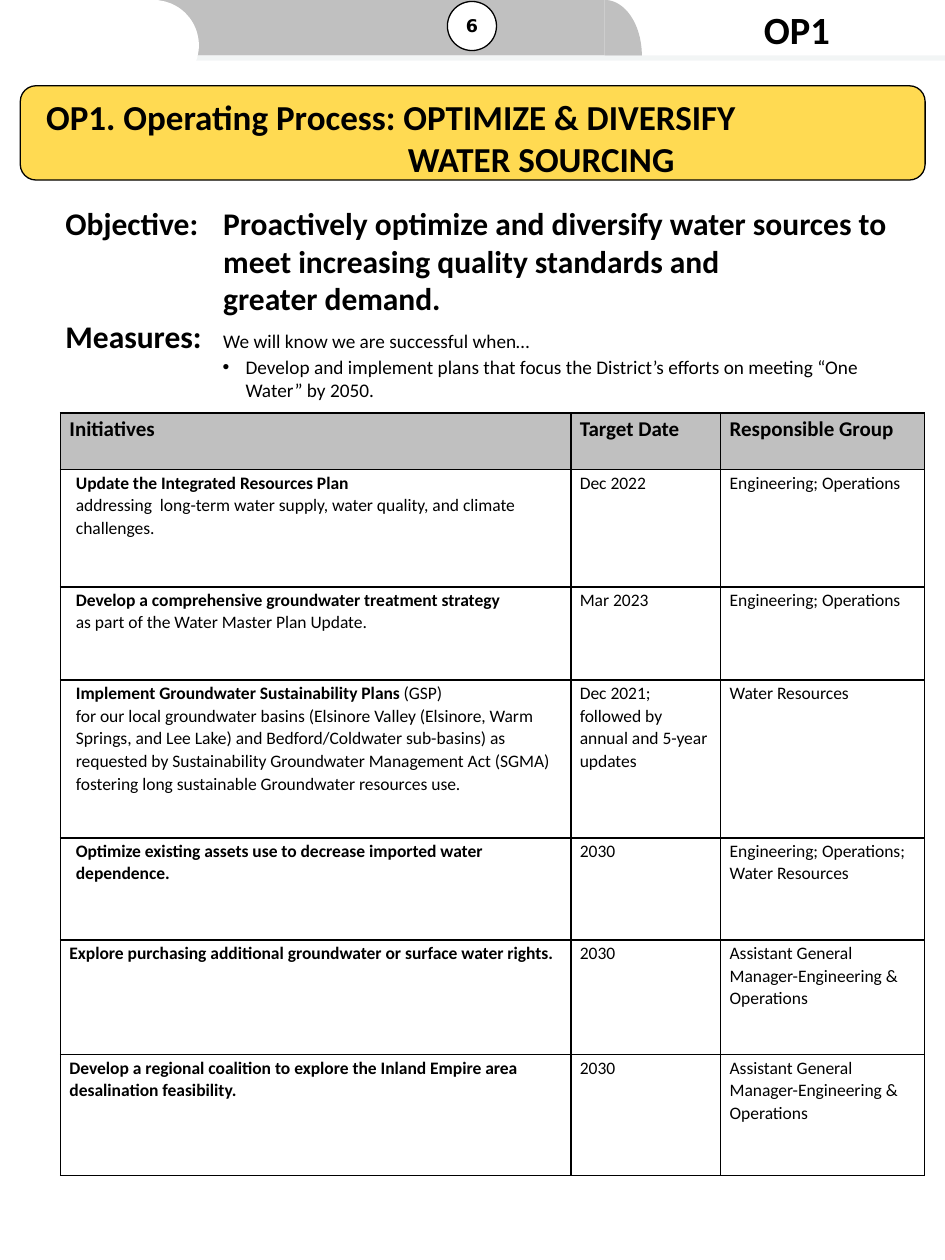
from math import cos, pi, sin

from lxml import etree
from pptx import Presentation
from pptx.dml.color import RGBColor
from pptx.enum.shapes import MSO_CONNECTOR, MSO_SHAPE
from pptx.enum.text import MSO_ANCHOR, MSO_AUTO_SIZE, PP_ALIGN
from pptx.oxml import parse_xml
from pptx.oxml.ns import nsdecls, qn
from pptx.util import Cm, Pt

RECT, OVAL, ROUND = MSO_SHAPE.RECTANGLE, MSO_SHAPE.OVAL, MSO_SHAPE.ROUNDED_RECTANGLE
LEFT, MID = PP_ALIGN.LEFT, PP_ALIGN.CENTER
TOP, CENTER = MSO_ANCHOR.TOP, MSO_ANCHOR.MIDDLE
STRAIGHT, FIXED = MSO_CONNECTOR.STRAIGHT, MSO_AUTO_SIZE.NONE
BLACK = RGBColor(0, 0, 0)
WHITE = RGBColor(255, 255, 255)
GREY = RGBColor(0xC0, 0xC0, 0xC0)
PALE = RGBColor(0xE7, 0xEC, 0xED)
GOLD = RGBColor(0xFF, 0xDA, 0x52)

CODE = "OP1"
PAGE = "6"
TITLE = "OP1. Operating Process: OPTIMIZE & DIVERSIFY \nWATER SOURCING"
GOAL = ("Objective: \tProactively optimize and diversify water sources to meet "
        "increasing quality standards and \ngreater demand.")
LABEL = "Measures: \t"
LEAD = "We will know we are successful when…"
POINT = ("Develop and implement plans that focus the District’s efforts on "
         "meeting “One Water” by 2050.")

HEADS = ["Initiatives", "Target Date", "Responsible Group"]
TEAM = "Engineering; Operations"
CHIEF = "Assistant General Manager-Engineering & Operations"
ITEMS = [
    ("Update the Integrated Resources Plan \n",
     "addressing  long-term water supply, water quality, and climate challenges.",
     "Dec 2022", TEAM, 0.13),
    ("Develop a comprehensive groundwater treatment strategy \n",
     "as part of the Water Master Plan Update.",
     "Mar 2023", TEAM, 0.13),
    ("Implement Groundwater Sustainability Plans ",
     "(GSP) \nfor our local groundwater basins (Elsinore Valley (Elsinore, Warm "
     "Springs, and Lee Lake) and Bedford/Coldwater sub-basins) as requested by "
     "Sustainability Groundwater Management Act (SGMA) fostering long "
     "sustainable Groundwater resources use.",
     "Dec 2021; followed by annual and 5-year updates", "Water Resources", 0.13),
    ("Optimize existing assets use to decrease imported water dependence.", "",
     "2030", "Engineering; Operations; Water Resources", 0.13),
    ("Explore purchasing additional groundwater or surface water rights.", "",
     "2030", CHIEF, 0),
    ("Develop a regional coalition to explore the Inland Empire area "
     "desalination feasibility.", "", "2030", CHIEF, 0),
]
COLS = [10.29, 3.02, 4.11]
ROWS = [1.14, 2.36, 1.88, 3.18, 2.06, 2.31, 2.44]


def write(par, text, size=10, bold=False, font="Calibri"):
    for i, part in enumerate(text.split("\n")):
        if i:
            par.add_line_break()
        if part:
            run = par.add_run()
            run.text = part
            run.font.size = Pt(size)
            run.font.bold = bold
            run.font.name = font
            run.font.color.rgb = BLACK


def indent(par, left, first=0):
    props = par._p.get_or_add_pPr()
    props.set("marL", str(Cm(left)))
    props.set("indent", str(Cm(first)))
    return props


def setup(frame, inset, anchor=TOP):
    frame.word_wrap = True
    frame.auto_size = FIXED
    frame.vertical_anchor = anchor
    frame.margin_left = frame.margin_right = Cm(inset)
    frame.margin_top = frame.margin_bottom = Cm(inset)
    return frame.paragraphs[0]


def paint(shape, fill, edge=None):
    shape.shadow.inherit = False
    shape.fill.solid()
    shape.fill.fore_color.rgb = fill
    if edge is None:
        shape.line.fill.background()
    else:
        shape.line.color.rgb = edge
        shape.line.width = Pt(0.75)
    return shape


def draw(slide, kind, box, fill, edge=None):
    return paint(slide.shapes.add_shape(kind, *map(Cm, box)), fill, edge)


def frame(cell):
    props = cell._tc.get_or_add_tcPr()
    for side in "LRTB":
        props.append(parse_xml(
            f'<a:ln{side} {nsdecls("a")} w="12700"><a:solidFill>'
            f'<a:srgbClr val="{BLACK}"/></a:solidFill></a:ln{side}>'))


def add_top(slide):
    draw(slide, RECT, (0, 0, 12.19, 1.12), GREY)
    badge = draw(slide, OVAL, (9.02, 0.03, 0.99, 0.99), WHITE, BLACK)
    par = setup(badge.text_frame, 0, CENTER)
    par.alignment = MID
    write(par, PAGE, bold=True, font="DejaVu Sans")

    turns = [pi / 2 * i / 24 for i in range(25)]
    arc = [(Cm(12.19 + 0.75 * sin(t)), Cm(1.12 - 1.12 * cos(t))) for t in turns]
    path = slide.shapes.build_freeform(Cm(12.19), Cm(1.12))
    path.add_line_segments(arc, close=True)
    paint(path.convert_to_shape(), GREY)

    rule = slide.shapes.add_connector(STRAIGHT, 0, Cm(1.17), Cm(19.05), Cm(1.17))
    rule.line.color.rgb = PALE
    rule.line.width = Pt(3)
    props = rule.element.spPr
    tint = next(props.iter(qn("a:srgbClr")))
    etree.SubElement(tint, qn("a:alpha")).set("val", "50000")
    etree.SubElement(props, qn("a:effectLst"))

    draw(slide, RECT, (0, 0, 3.1, 1.73), WHITE)
    draw(slide, OVAL, (2.18, 0, 1.83, 1.83), WHITE)
    tag = slide.shapes.add_textbox(Cm(13.08), 0, Cm(5.97), Cm(1.19))
    par = setup(tag.text_frame, 0.13)
    par.alignment = MID
    write(par, CODE, size=22, bold=True)


def add_title(slide):
    draw(slide, ROUND, (0.41, 1.73, 18.24, 1.9), GOLD, BLACK)
    title = slide.shapes.title
    title.element.getparent().append(title.element)
    title.left, title.top, title.width, title.height = map(Cm, (0.5, 1.83, 18.05, 1.8))
    par = setup(title.text_frame, 0.1)
    par.alignment = LEFT
    indent(par, 7.62, -7.29)
    write(par, TITLE, size=20, bold=True)


def add_goal(slide):
    box = slide.shapes.add_textbox(Cm(1.22), Cm(4.01), Cm(17.42), Cm(4.25))
    par = setup(box.text_frame, 0.1)
    indent(par, 3.18, -3.18)
    write(par, GOAL, size=18, bold=True)
    par = box.text_frame.add_paragraph()
    indent(par, 3.18, -3.18)
    write(par, LABEL, size=18, bold=True)
    write(par, LEAD, size=11)
    par = box.text_frame.add_paragraph()
    props = indent(par, 3.63, -0.46)
    etree.SubElement(props, qn("a:buFont")).set("typeface", "Arial")
    etree.SubElement(props, qn("a:buChar")).set("char", "•")
    write(par, POINT, size=11)


def add_grid(slide):
    grid = slide.shapes.add_table(len(ROWS), len(COLS), Cm(1.22), Cm(8.33),
                                  Cm(sum(COLS)), Cm(sum(ROWS))).table
    grid.first_row = grid.horz_banding = False
    for col, wide in zip(grid.columns, COLS):
        col.width = Cm(wide)
    for row, high in zip(grid.rows, ROWS):
        row.height = Cm(high)

    lines = [([(head, True)] for head in HEADS)]
    lines += [([(name, True), (more, False)], [(date, False)], [(group, False)])
              for name, more, date, group, _ in ITEMS]
    for r, line in enumerate(lines):
        for c, parts in enumerate(line):
            cell = grid.cell(r, c)
            cell.margin_left = cell.margin_right = Cm(0.18)
            cell.margin_top, cell.margin_bottom = Cm(0.03 if r else 0), 0
            frame(cell)
            if r:
                cell.fill.background()
            else:
                cell.fill.solid()
                cell.fill.fore_color.rgb = GREY
            par = cell.text_frame.paragraphs[0]
            par.line_spacing = 1.07 if r else 1.13
            par.space_after = Pt(12 if r else 9)
            if r and c == 0:
                indent(par, ITEMS[r - 1][-1])
            for text, bold in parts:
                write(par, text, size=10 if r else 12, bold=bold)


def main():
    deck = Presentation()
    deck.slide_width, deck.slide_height = Cm(19.05), Cm(25.4)
    slide = deck.slides.add_slide(deck.slide_layouts[5])
    add_top(slide)
    add_title(slide)
    add_goal(slide)
    add_grid(slide)
    deck.save("out.pptx")


if __name__ == "__main__":
    main()
